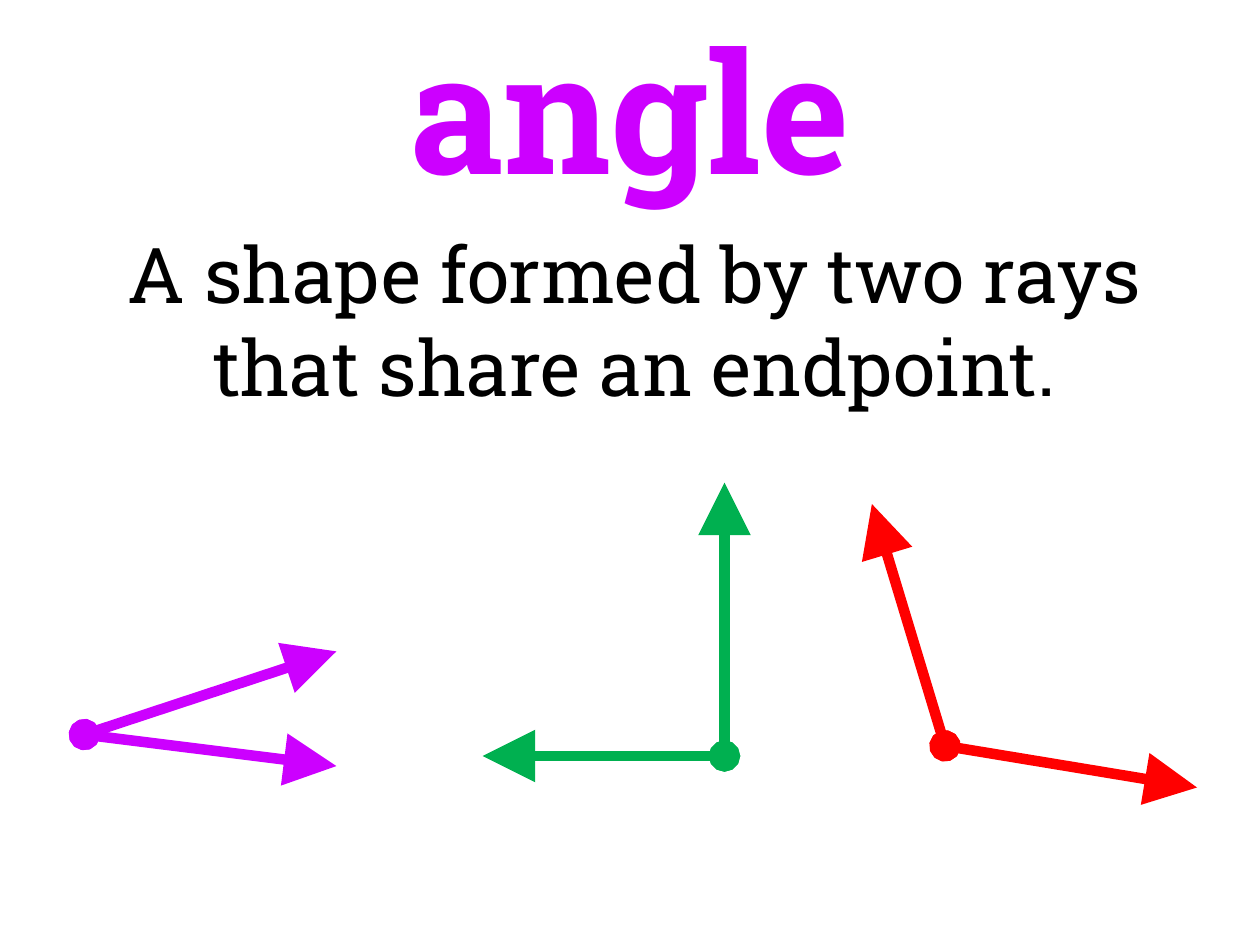
import pptx
import pptx.dml.color
import pptx.enum.shapes
import pptx.enum.text
import pptx.oxml
import pptx.oxml.ns
import pptx.util
from pptx.util import Inches


def colour(hex_code):
    return pptx.dml.color.RGBColor.from_string(hex_code)


class VocabularyCard:
    font = "Roboto Slab"
    ray_width = pptx.util.Pt(6)

    def __init__(self, slide):
        self.slide = slide

    def text(self, wording, left, top, width, height, size, hex_code, bold=False):
        box = self.slide.shapes.add_textbox(
            Inches(left), Inches(top), Inches(width), Inches(height))
        frame = box.text_frame
        frame.word_wrap = True
        frame.auto_size = pptx.enum.text.MSO_AUTO_SIZE.SHAPE_TO_FIT_TEXT
        frame.text = wording
        paragraph = frame.paragraphs[0]
        paragraph.alignment = pptx.enum.text.PP_ALIGN.CENTER
        font = paragraph.runs[0].font
        font.name = self.font
        font.size = pptx.util.Pt(size)
        font.bold = bold
        font.color.rgb = colour(hex_code)

    def ray(self, vertex, tip, hex_code):
        """Draw a line with a dot at the vertex and an arrowhead at the tip."""
        ray = self.slide.shapes.add_connector(
            pptx.enum.shapes.MSO_CONNECTOR.STRAIGHT,
            *(Inches(value) for value in (*vertex, *tip)))
        ray.line.width = self.ray_width
        ray.line.color.rgb = colour(hex_code)
        outline = ray.line._get_or_add_ln()
        for end, kind, size in (("headEnd", "oval", "med"),
                                ("tailEnd", "triangle", "lg")):
            outline.append(pptx.oxml.parse_xml(
                f'<a:{end} {pptx.oxml.ns.nsdecls("a")} '
                f'type="{kind}" w="{size}" len="{size}"/>'))
        ray._element.spPr.append(pptx.oxml.parse_xml(
            f'<a:effectLst {pptx.oxml.ns.nsdecls("a")}/>'))

    def angle(self, vertex, tips, hex_code):
        for tip in tips:
            self.ray(vertex, tip, hex_code)


def main():
    presentation = pptx.Presentation()
    presentation.slide_width = Inches(10)
    presentation.slide_height = Inches(7.5)
    card = VocabularyCard(presentation.slides.add_slide(presentation.slide_layouts[6]))

    card.text("A shape formed by two rays that share an endpoint.",
              0.33, 1.75, 9.42, 1.58, 44, "000000")
    card.text("angle", 0, 0, 10, 1.72, 96, "CC00FF", bold=True)

    card.angle((0.67, 5.83), [(2.67, 6.08), (2.67, 5.17)], "CC00FF")
    card.angle((5.75, 6), [(3.83, 6), (5.75, 3.83)], "00B050")
    card.angle((7.5, 5.92), [(9.5, 6.25), (6.92, 4)], "FF0000")

    presentation.save("out.pptx")


if __name__ == "__main__":
    main()
